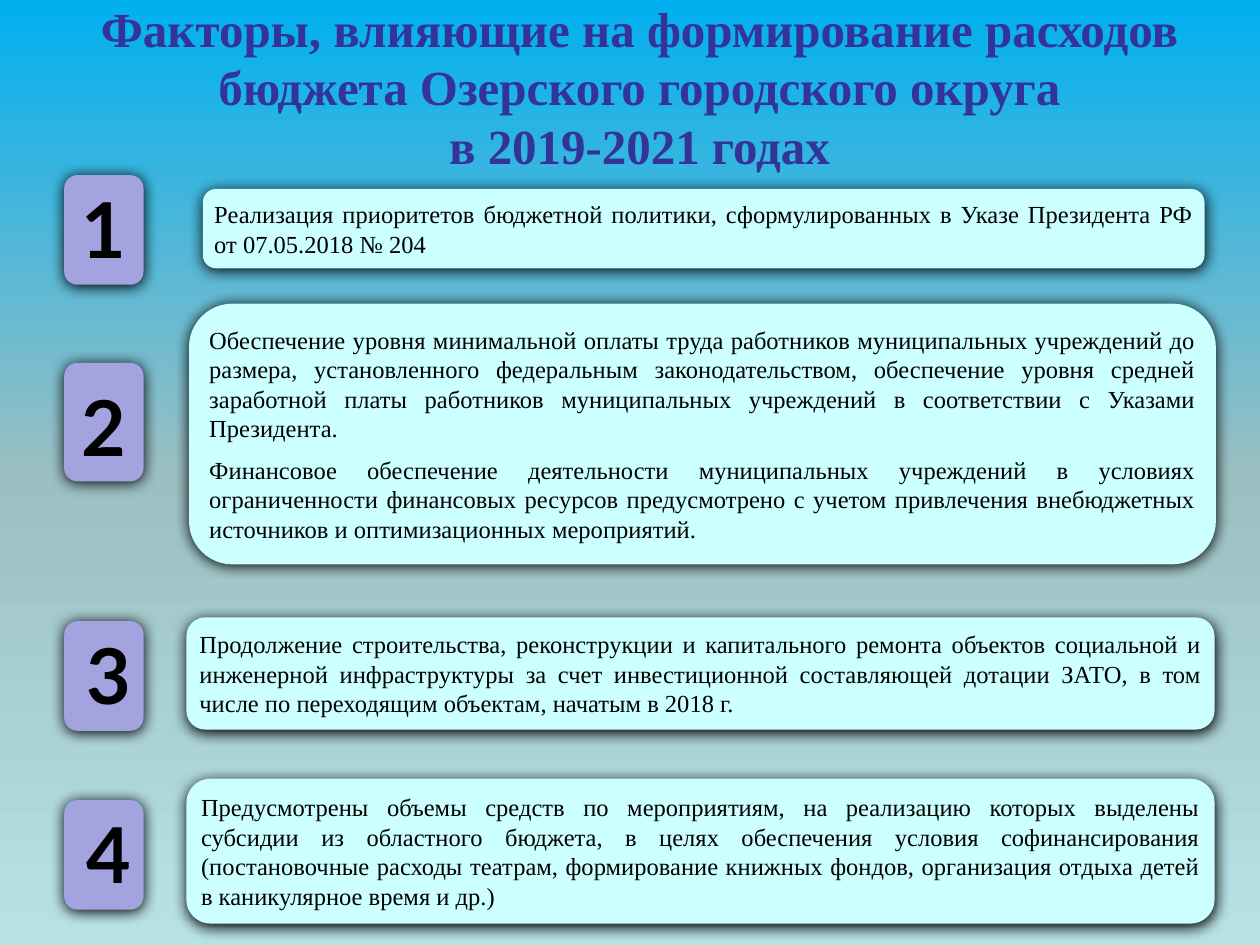
from copy import deepcopy
from dataclasses import dataclass

from lxml.etree import SubElement
from pptx import Presentation
from pptx.dml.color import RGBColor as RGB
from pptx.enum.shapes import MSO_SHAPE as SHAPE
from pptx.enum.text import MSO_ANCHOR as ANCHOR, MSO_AUTO_SIZE as AUTO, PP_ALIGN as ALIGN
from pptx.oxml.ns import qn
from pptx.util import Inches, Pt

COLS, ROWS = 100, 75  # grid over the slide
COLORS = {"sky": "00B0F0", "haze": "9BBFC2", "mist": "B8E3E6", "title": "333399",
          "badge": "A3A3E0", "panel": "CCFFFF", "text": "000000"}
SERIF, SANS = "Times New Roman", "Lato"
BADGE_COL, BADGE_W = 5.1, 6.3
DIGIT_COL = 5.9
TIGHT = (0.6, 0.5)  # side and top insets, in cells
LOOSE = (1, 0.5)


@dataclass
class Box:
    col: float
    row: float
    w: float
    h: float


@dataclass
class Factor:
    number: str
    badge_row: float
    badge_h: float
    digit: Box
    insets: tuple[float, float]
    panel: Box
    paragraphs: list[str]


FACTORS = [
    Factor("1", 13.9, 8.7, Box(DIGIT_COL, 13.9, 3.9, 8.3), TIGHT, Box(16.1, 15, 79.5, 6.3), [
        "Реализация приоритетов бюджетной политики, сформулированных в Указе "
        "Президента РФ от 07.05.2018 № 204"]),
    Factor("2", 28.8, 9.4, Box(DIGIT_COL, 29.6, 3.9, 8.4), TIGHT, Box(15, 24.1, 81.5, 20.7), [
        "Обеспечение уровня минимальной оплаты труда работников муниципальных "
        "учреждений до размера, установленного федеральным законодательством, "
        "обеспечение уровня средней заработной платы работников муниципальных "
        "учреждений в соответствии с Указами Президента.",
        "Финансовое обеспечение деятельности муниципальных учреждений в условиях "
        "ограниченности финансовых ресурсов предусмотрено с учетом привлечения "
        "внебюджетных источников и оптимизационных мероприятий."]),
    Factor("3", 49.3, 8.7, Box(DIGIT_COL, 49.3, 4.7, 8.4), LOOSE, Box(14.8, 49, 81.6, 8.9), [
        "Продолжение строительства, реконструкции и капитального ремонта объектов "
        "социальной и инженерной инфраструктуры за счет инвестиционной составляющей "
        "дотации ЗАТО, в том числе по переходящим объектам, начатым в 2018 г."]),
    Factor("4", 63.5, 8.7, Box(DIGIT_COL, 63.5, 4.7, 8.4), LOOSE, Box(14.8, 61.8, 81.6, 11.5), [
        "Предусмотрены объемы средств по мероприятиям, на реализацию которых выделены "
        "субсидии из областного бюджета, в целях обеспечения условия софинансирования "
        "(постановочные расходы театрам, формирование книжных фондов, организация "
        "отдыха детей в каникулярное время и др.)"]),
]

prs = Presentation()
prs.slide_width, prs.slide_height = Inches(10), Inches(7.5)
s = prs.slides.add_slide(prs.slide_layouts[5])


def place(box: Box) -> tuple[int, int, int, int]:
    cw, rh = prs.slide_width / COLS, prs.slide_height / ROWS
    return round(box.col * cw), round(box.row * rh), round(box.w * cw), round(box.h * rh)


def write(sp, paragraphs: list[str], *, size: float, font: str = SERIF, color: str = "text",
          bold: bool = False, align=ALIGN.LEFT, anchor=ANCHOR.MIDDLE,
          insets: tuple[float, float] = LOOSE, auto=AUTO.SHAPE_TO_FIT_TEXT) -> None:
    tf = sp.text_frame
    tf.word_wrap, tf.auto_size, tf.vertical_anchor = True, auto, anchor
    _, _, side, top = place(Box(0, 0, *insets))
    tf.margin_left = tf.margin_right = side
    tf.margin_top = tf.margin_bottom = top
    for i, text in enumerate(paragraphs):
        p = tf.add_paragraph() if i else tf.paragraphs[0]
        p.text, p.alignment = text, align
        p.space_before = Pt(size / 2 if i else 0)
        for r in p.runs:
            r.font.name, r.font.size, r.font.bold = font, Pt(size), bold
            r.font.color.rgb = RGB.from_string(COLORS[color])


def rounded(box: Box, color: str):
    """Borderless rounded rectangle with a soft dark shadow."""
    sp = s.shapes.add_shape(SHAPE.ROUNDED_RECTANGLE, *place(box))
    sp.fill.solid()
    sp.fill.fore_color.rgb = RGB.from_string(COLORS[color])
    sp.line.fill.background()
    sp.shadow.inherit = False
    effects = sp._element.spPr.find(qn("a:effectLst"))
    shadow = SubElement(effects, qn("a:outerShdw"), blurRad=str(Pt(8.5)), dist=str(Pt(1)),
                        dir="5400000", algn="t", rotWithShape="0")
    SubElement(shadow, qn("a:srgbClr"), val=COLORS["text"])
    return sp


def draw_factor(f: Factor) -> None:
    rounded(Box(BADGE_COL, f.badge_row, BADGE_W, f.badge_h), "badge")
    digit = s.shapes.add_textbox(*place(f.digit))
    write(digit, [f.number], size=44, font=SANS, bold=True, anchor=ANCHOR.TOP, insets=f.insets,
          align=ALIGN.LEFT if f.number == "1" else ALIGN.CENTER)
    write(rounded(f.panel, "panel"), f.paragraphs, size=14, align=ALIGN.JUSTIFY, insets=TIGHT)


# Background: three-stop vertical gradient
fill = s.background.fill
fill.gradient()
fill.gradient_angle = 270
stops = s._element.find(".//" + qn("a:gsLst"))
stops.append(deepcopy(stops[0]))
for stop, pos, name in zip(fill.gradient_stops, (0, 0.5, 1), ("sky", "haze", "mist")):
    stop.position = pos
    stop.color.rgb = RGB.from_string(COLORS[name])

# Title
title = s.shapes.title
title.left, title.top, title.width, title.height = place(Box(5.1, 0.6, 91.3, 12.5))
write(title, ["Факторы, влияющие на формирование расходов бюджета Озерского городского округа"
              "\vв 2019-2021 годах"],
      size=28, color="title", bold=True, align=ALIGN.CENTER, auto=AUTO.NONE)

# Numbered factors
for factor in FACTORS:
    draw_factor(factor)

prs.save("out.pptx")
